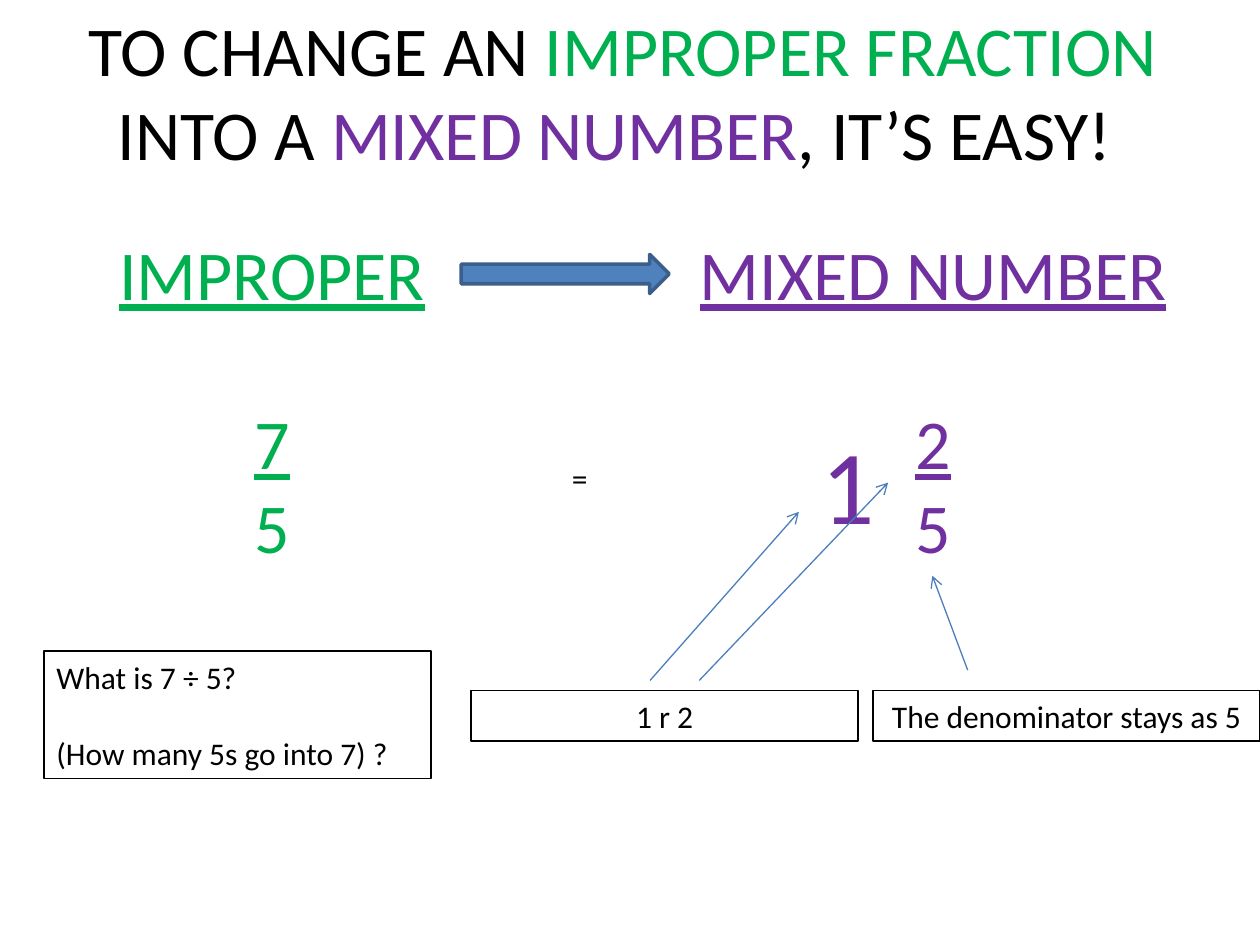
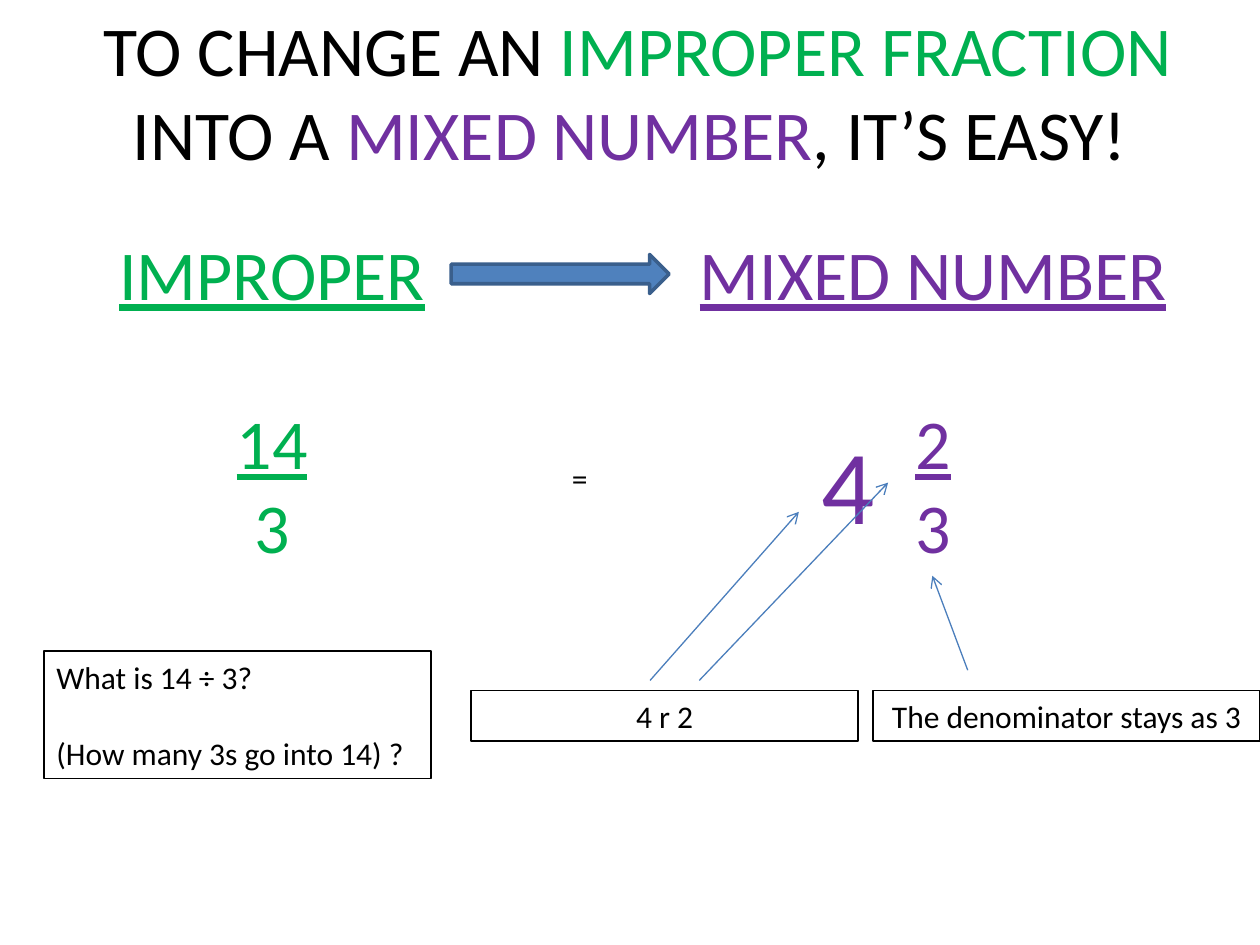
from dataclasses import dataclass

from lxml import etree
from pptx import Presentation
from pptx.dml.color import RGBColor
from pptx.enum import shapes, text as txt
from pptx.oxml import ns
from pptx.util import Pt


@dataclass(frozen=True)
class Theme:
    font: str = "Calibri"
    black: str = "000000"
    green: str = "00B050"
    purple: str = "7030A0"
    blue: str = "4F81BD"
    edge: str = "3A5F8C"
    line: str = "4B7EBC"
    small: int = 18
    large: int = 40
    huge: int = 60
    pitch: float = 1.22


T = Theme()


def rgb(code):
    return RGBColor.from_string(code)


def write(slide, box, lines, size=T.small, color=T.black, center=True,
          gap=0, under=0, frame=False):
    """Write lines, each a string or a list of (words, colour) runs.

    gap is the number of line heights left after the first line;
    under is the number of leading lines that are underlined.
    """
    shape = slide.shapes.add_textbox(*map(Pt, box))
    if frame:
        shape.line.color.rgb = rgb(T.black)
        shape.line.width = Pt(1)
    body = shape.text_frame
    body.word_wrap = True
    for row, line in enumerate(lines):
        para = body.add_paragraph() if row else body.paragraphs[0]
        para.alignment = txt.PP_ALIGN.CENTER if center else txt.PP_ALIGN.LEFT
        if row == 1 and gap:
            para.space_before = Pt(round(gap * size * T.pitch, 1))
        runs = [(line, color)] if isinstance(line, str) else line
        for words, tint in runs:
            run = para.add_run()
            run.text = words
            run.font.name = T.font
            run.font.size = Pt(size)
            run.font.color.rgb = rgb(tint)
            run.font.underline = row < under


def point(slide, start, end):
    """Draw a thin line with an open arrowhead at its end."""
    line = slide.shapes.add_connector(
        shapes.MSO_CONNECTOR.STRAIGHT, *map(Pt, start + end))
    line.line.color.rgb = rgb(T.line)
    line.line.width = Pt(0.75)
    etree.SubElement(line.line._get_or_add_ln(), ns.qn("a:tailEnd"), type="arrow")
    etree.SubElement(line._element.spPr, ns.qn("a:effectLst"))


def arrow(slide, left, right):
    """Draw the block arrow between the two headings."""
    shape = slide.shapes.add_shape(
        shapes.MSO_SHAPE.RIGHT_ARROW,
        Pt(left), Pt(145.4), Pt(right - left), Pt(22.4))
    shape.shadow.inherit = False
    shape.fill.solid()
    shape.fill.fore_color.rgb = rgb(T.blue)
    shape.line.color.rgb = rgb(T.edge)
    shape.line.width = Pt(2)


def title(slide, left):
    write(slide, (left, 0, 720, 104.4), [[
        (" TO CHANGE AN ", T.black), ("IMPROPER FRACTION ", T.green),
        ("INTO A ", T.black), ("MIXED NUMBER", T.purple),
        (", IT’S EASY!", T.black)]], size=T.large)


def column(slide, left, width, head, top, base, color):
    """Write a heading with a fraction below it."""
    write(slide, (left, 128.2, width, 201), [head, str(top), str(base)],
          size=T.large, color=color, gap=1, under=2)


def lesson(deck, top, base, shift, tail):
    """Add a slide that turns top/base into a mixed number."""
    slide = deck.slides.add_slide(deck.slide_layouts[6])
    whole, rest = divmod(top, base)
    column(slide, 31, 249, "IMPROPER", top, base, T.green)
    column(slide, 377.3, 311.8, "MIXED NUMBER", rest, base, T.purple)
    write(slide, (297.4, 258.5, 67.7, 29), ["="])
    write(slide, (462.2, 236.2, 62.6, 80), [str(whole)],
          size=T.huge, color=T.purple, center=False)

    write(slide, (25.2, 372.2, 221, 72.7),
          [f"What is {top} ÷ {base}?", f"(How many {base}s go into {top}) ?"],
          center=False, gap=1, frame=True)
    notes = [(269.3, f"{whole} r {rest}"),
             (499, f"The denominator stays as {base}")]
    for left, words in notes:
        write(slide, (left, 394.6, 221, 29), [words], frame=True)

    point(slide, (371.5, 388.8), (456.5, 292.5))
    point(slide, (399.6, 388.8), (507.5, 275.8))
    point(slide, (553, 383), (532.8, 329))
    arrow(slide, tail, 382.4)
    title(slide, shift)


def main():
    deck = Presentation()
    deck.slide_width, deck.slide_height = Pt(720), Pt(540)
    lesson(deck, 7, 5, shift=-8.6, tail=263.5)
    lesson(deck, 14, 3, shift=0, tail=257.8)
    deck.save("out.pptx")


if __name__ == "__main__":
    main()
